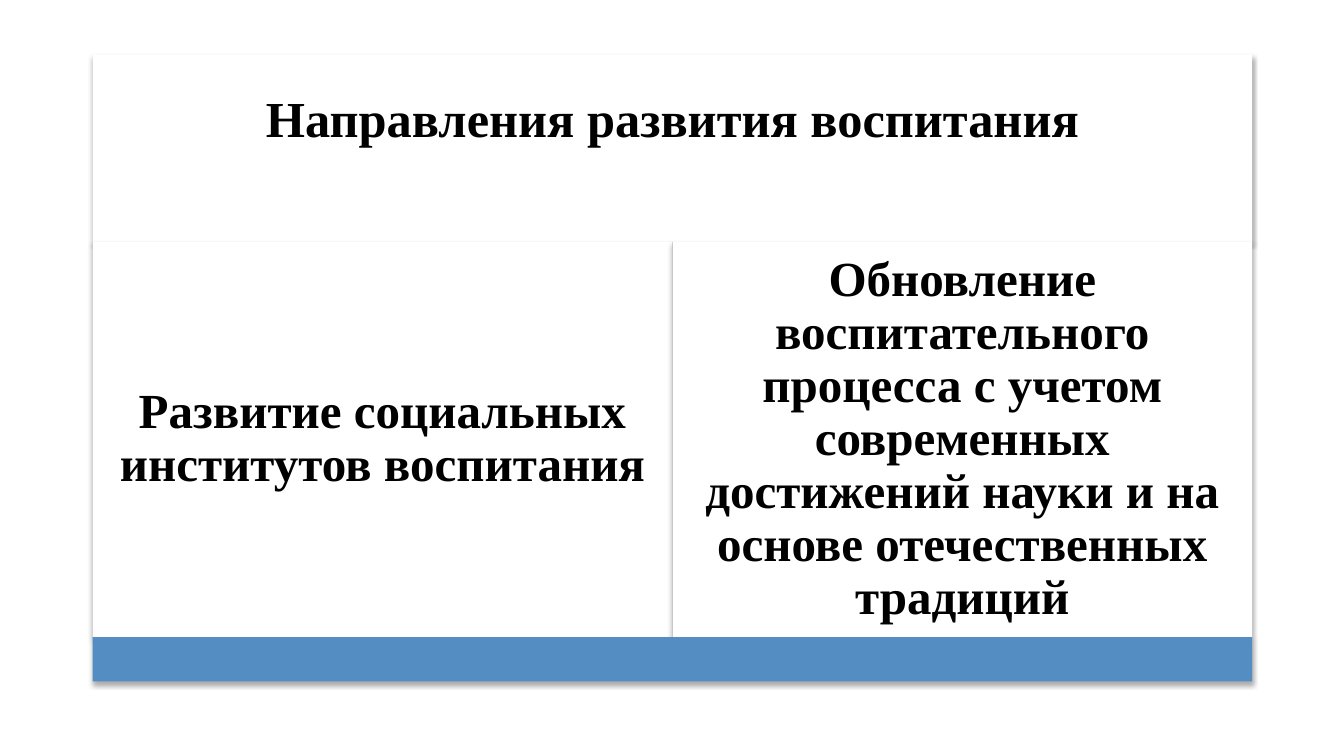
from lxml import etree
from pptx import Presentation
from pptx import util as u
from pptx.dml.color import RGBColor
from pptx.enum import shapes, text
from pptx.oxml import ns

WHITE = RGBColor(0xFF, 0xFF, 0xFF)
BLACK = RGBColor(0, 0, 0)
BLUE = RGBColor(0x53, 0x8D, 0xC1)

SLIDE_W, SLIDE_H = u.Inches(13.33), u.Inches(7.5)
LEFT, TOP, WIDTH = u.Inches(0.92), u.Inches(0.54), u.Inches(11.5)
HEADING_H, COLUMNS_H, BASE_H = u.Inches(1.86), u.Inches(3.92), u.Inches(0.44)
INSET = u.Inches(0.15)

HEADING = "Направления развития воспитания"
DIRECTIONS = [
    "Развитие социальных институтов воспитания",
    "Обновление воспитательного процесса с учетом современных достижений "
    "науки и на основе отечественных традиций",
]


def set_all(target, values):
    for name, value in values.items():
        setattr(target, name, value)


def style_panel(panel, color):
    """Give a panel a flat fill, no outline and a soft shadow below it."""
    panel.fill.solid()
    panel.fill.fore_color.rgb = color
    panel.line.fill.background()
    panel.shadow.inherit = False
    effects = panel._element.spPr.find(ns.qn("a:effectLst"))
    shadow = etree.SubElement(
        effects, ns.qn("a:outerShdw"), blurRad=str(u.Pt(3.5)),
        dist=str(u.Pt(2.2)), dir="5400000", rotWithShape="0")
    tint = etree.SubElement(shadow, ns.qn("a:srgbClr"), val="000000")
    etree.SubElement(tint, ns.qn("a:alpha"), val="32000")


def write(panel, wording, size, line_spacing, bottom=INSET):
    frame = panel.text_frame
    set_all(frame, dict(
        text=wording, word_wrap=True, auto_size=text.MSO_AUTO_SIZE.NONE,
        vertical_anchor=text.MSO_ANCHOR.MIDDLE, margin_left=INSET,
        margin_right=INSET, margin_top=INSET, margin_bottom=bottom))
    paragraph = frame.paragraphs[0]
    set_all(paragraph, dict(
        alignment=text.PP_ALIGN.CENTER, line_spacing=line_spacing))
    font = paragraph.runs[0].font
    set_all(font, dict(name="Times New Roman", size=u.Pt(size), bold=True))
    font.color.rgb = BLACK


def add_panel(slide, box, color):
    panel = slide.shapes.add_shape(shapes.MSO_SHAPE.RECTANGLE, *box)
    style_panel(panel, color)
    return panel


def place_heading(slide, box):
    heading = slide.shapes.title
    set_all(heading, dict(zip(("left", "top", "width", "height"), box)))
    style_panel(heading, WHITE)
    # The deeper bottom inset lifts the heading above the middle of its panel.
    write(heading, HEADING, 36, 1.0, bottom=u.Inches(0.77))


def add_directions(slide, box):
    left, top, width, height = box
    column_w = width // len(DIRECTIONS)
    for column, wording in enumerate(DIRECTIONS):
        place = (left + column * column_w, top, column_w, height)
        write(add_panel(slide, place, WHITE), wording, 35, 0.9)


def main():
    deck = Presentation()
    set_all(deck, dict(slide_width=SLIDE_W, slide_height=SLIDE_H))
    slide = deck.slides.add_slide(deck.slide_layouts.get_by_name("Title Only"))
    columns_top = TOP + HEADING_H
    place_heading(slide, (LEFT, TOP, WIDTH, HEADING_H))
    add_directions(slide, (LEFT, columns_top, WIDTH, COLUMNS_H))
    add_panel(slide, (LEFT, columns_top + COLUMNS_H, WIDTH, BASE_H), BLUE)
    deck.save("out.pptx")


if __name__ == "__main__":
    main()
